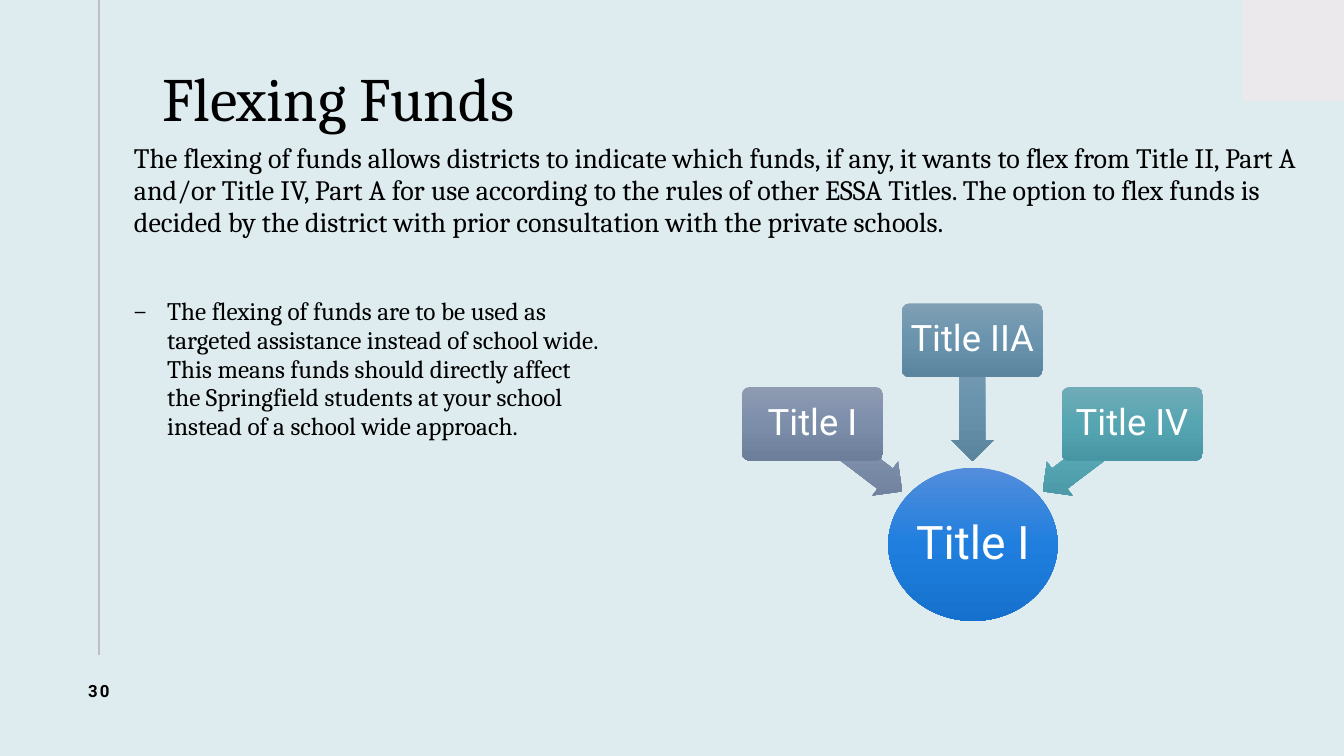
from pptx import Presentation
from pptx.util import Inches, Pt
from pptx.dml.color import RGBColor
from pptx.enum.shapes import MSO_CONNECTOR, MSO_SHAPE
from pptx.enum.text import MSO_ANCHOR, PP_ALIGN
from pptx.oxml.ns import qn
from lxml import etree

RECT, OVAL = MSO_SHAPE.RECTANGLE, MSO_SHAPE.OVAL
ROUND, ARROW = MSO_SHAPE.ROUNDED_RECTANGLE, MSO_SHAPE.LEFT_ARROW
LINE = MSO_CONNECTOR.STRAIGHT
LEFT, CENTER = PP_ALIGN.LEFT, PP_ALIGN.CENTER
TOP, MIDDLE = MSO_ANCHOR.TOP, MSO_ANCHOR.MIDDLE

SERIF, SANS = "Cambria", "Roboto"
COLORS = {"back": "DEECEF", "corner": "EBE9EC", "rule": "C4BCC6",
          "ink": "000000", "white": "FFFFFF"}
FADES = {
    "blue": ("538DDC", "207FDE", "1571CD"),
    "slate": ("8E9BB2", "7D8EAB", "6D7E9A"),
    "steel": ("7F9FB4", "6A94AE", "5B849E"),
    "teal": ("70ACB7", "56A5B2", "4896A3"),
}
TITLE = "Flexing Funds"
NUMBER = "30"
INTRO = ("The flexing of funds allows districts to indicate which funds, if any, "
         "it wants to flex from Title II, Part A and/or Title IV, Part A for use "
         "according to the rules of other ESSA Titles. The option to flex funds is "
         "decided by the district with prior consultation with the private schools.")
POINT = "\n".join([
    "The flexing of funds are to be used as ",
    "targeted assistance instead of school wide. ",
    "This means funds should directly affect",
    "the Springfield students at your school ",
    "instead of a school wide approach.",
])
HUB = ("Title I", (8.81, 4.64, 1.68, 1.52))
SOURCES = [
    ("Title I", "slate", 3.84, (7.95, 4.33, 1.11), 217.1),
    ("Title IIA", "steel", 3.01, (9.05, 3.77, 1.19), 270),
    ("Title IV", "teal", 3.84, (10.23, 4.33, 1.11), 322.9),
]
BOX_W, BOX_H, ARROW_H = 1.4, 0.73, 0.42
BOX_X, BOX_STEP = 7.36, 1.585


def color(name):
    return RGBColor.from_string(COLORS[name])


def write(frame, text, size, font=SERIF, ink="ink", bold=False, align=LEFT,
          anchor=TOP, pads=(0.1, 0.05, 0.1, 0.05), line=0.9, before=0,
          indent=None, bullet=None, track=None, more=False):
    frame.word_wrap = True
    frame.vertical_anchor = anchor
    (frame.margin_left, frame.margin_top,
     frame.margin_right, frame.margin_bottom) = map(Inches, pads)
    para = frame.add_paragraph() if more else frame.paragraphs[0]
    para.text = text
    para.alignment = align
    para.line_spacing = line
    para.space_before = Pt(before)
    props = para._p.get_or_add_pPr()
    if indent:
        props.set("marL", str(Inches(indent[0])))
        props.set("indent", str(Inches(indent[1])))
    if bullet:
        etree.SubElement(props, qn("a:buFont"), typeface=font)
        etree.SubElement(props, qn("a:buChar"), char=bullet)
    for run in para.runs:
        run.font.name = font
        run.font.size = Pt(size)
        run.font.bold = bold
        run.font.color.rgb = color(ink)
        if track:
            run._r.get_or_add_rPr().set("spc", str(int(track * 100)))


def frame(slide, *place):
    return slide.shapes.add_textbox(*map(Inches, place)).text_frame


def shape(slide, kind, place, fade=None, fill=None):
    item = slide.shapes.add_shape(kind, *map(Inches, place))
    item.shadow.inherit = False
    item.line.fill.background()
    if fill:
        item.fill.solid()
        item.fill.fore_color.rgb = color(fill)
    else:
        item.fill.gradient()
        grad = item._element.spPr.find(qn("a:gradFill"))
        grad.set("rotWithShape", "0")
        stops = grad.find(qn("a:gsLst"))
        for old in list(stops):
            stops.remove(old)
        for pos, tone in zip((0, 50000, 100000), FADES[fade]):
            stop = etree.SubElement(stops, qn("a:gs"), pos=str(pos))
            etree.SubElement(stop, qn("a:srgbClr"), val=tone)
        grad.find(qn("a:lin")).set("ang", "5400000")
    return item


def main():
    deck = Presentation()
    deck.slide_width, deck.slide_height = Inches(13.33), Inches(7.5)
    slide = deck.slides.add_slide(deck.slide_layouts[6])
    slide.background.fill.solid()
    slide.background.fill.fore_color.rgb = color("back")

    shape(slide, RECT, (12.33, 0, 1, 1), fill="corner")
    rule = slide.shapes.add_connector(
        LINE, Inches(0.98), 0, Inches(0.98), Inches(6.5))
    rule.line.color.rgb = color("rule")
    rule.line.width = Pt(1.5)
    etree.SubElement(rule._element.spPr, qn("a:effectLst"))

    write(frame(slide, 1.61, 0.23, 10.73, 1.56), TITLE, 44, anchor=MIDDLE,
          pads=(0, 0.05, 0.1, 0.05))
    write(frame(slide, 0.45, 6.5, 1.06, 0.71), NUMBER, 12, font=SANS, bold=True,
          align=CENTER, anchor=MIDDLE, line=1.0, track=1.5)

    label = dict(font=SANS, ink="white", align=CENTER, anchor=MIDDLE,
                 pads=(0.02,) * 4)
    text, place = HUB
    write(shape(slide, OVAL, place, "blue").text_frame, text, 33, **label)
    for col, (text, fade, top, spot, turn) in enumerate(SOURCES):
        arrow = shape(slide, ARROW, (*spot, ARROW_H), fade)
        arrow.adjustments[0], arrow.adjustments[1] = 0.6, 0.5
        arrow.rotation = turn
        box = shape(slide, ROUND, (BOX_X + col * BOX_STEP, top, BOX_W, BOX_H), fade)
        box.adjustments[0] = 0.1
        write(box.text_frame, text, 26, **label)

    body = frame(slide, 0.76, 1.37, 12.29, 5.92)
    write(body, INTRO, 20, line=0.95, before=10.7, indent=(0.47, 0))
    write(body, POINT, 18, line=0.95, before=42, indent=(0.8, -0.33),
          bullet="–", more=True)
    deck.save("out.pptx")


if __name__ == "__main__":
    main()
